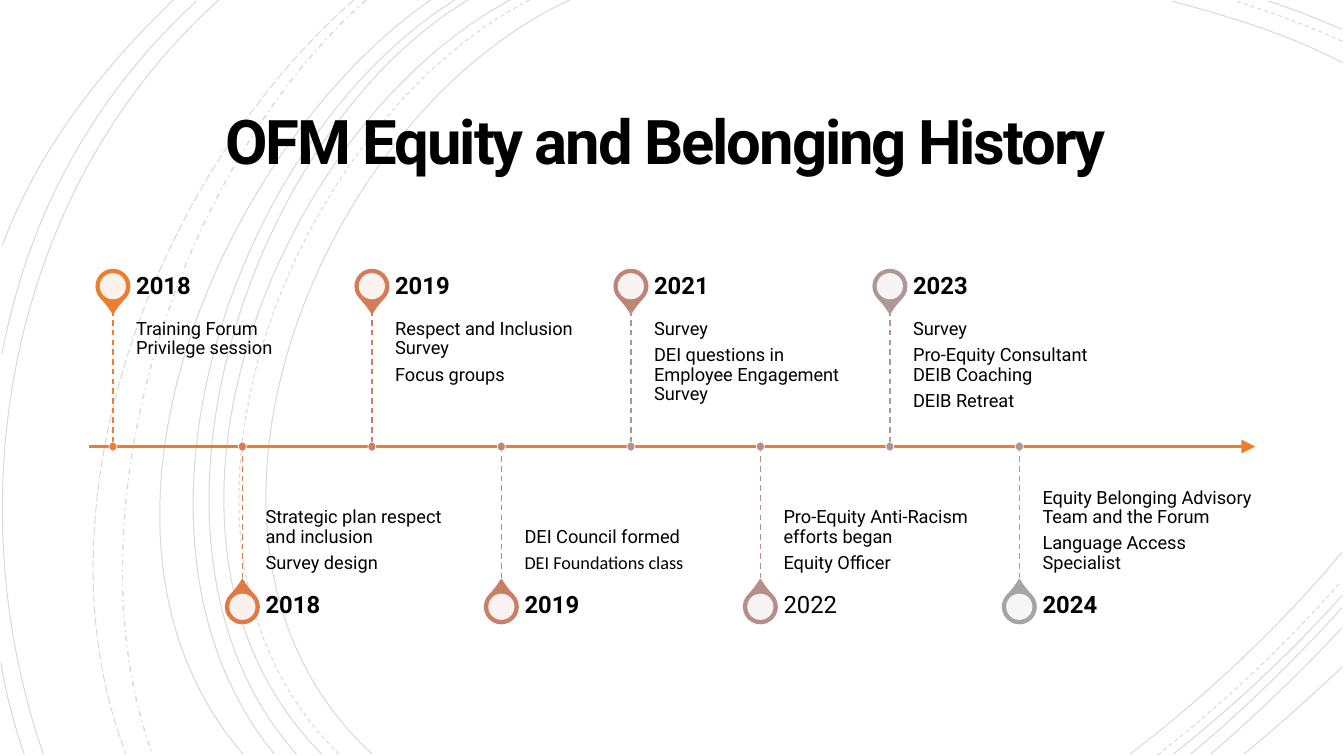
from lxml import etree
from pptx import Presentation
from pptx import util as u
from pptx.dml.color import RGBColor
from pptx.enum import dml, shapes, text
from pptx.oxml.ns import qn

BLACK = RGBColor(0, 0, 0)
WHITE = RGBColor(255, 255, 255)
ORANGE = RGBColor(0xED, 0x7D, 0x31)
RUST = RGBColor(0xE0, 0x7A, 0x44)
BRICK = RGBColor(0xDC, 0x7A, 0x4B)
CLAY = RGBColor(0xD5, 0x7B, 0x56)
SIENNA = RGBColor(0xCC, 0x7D, 0x64)
CORAL = RGBColor(0xCA, 0x7E, 0x67)
ROSE = RGBColor(0xBF, 0x84, 0x78)
BLUSH = RGBColor(0xBD, 0x86, 0x7B)
MAUVE = RGBColor(0xB6, 0x8D, 0x88)
DUSK = RGBColor(0xB0, 0x93, 0x91)
ASH = RGBColor(0xAD, 0x98, 0x97)
GRAY = RGBColor(0xA5, 0xA5, 0xA5)

DASH = dml.MSO_LINE.DASH
LONG = dml.MSO_LINE.LONG_DASH
MIXED = dml.MSO_LINE.DASH_DOT
SOLID = dml.MSO_LINE.SOLID
TOP = text.MSO_ANCHOR.TOP
MIDDLE = text.MSO_ANCHOR.MIDDLE
BOTTOM = text.MSO_ANCHOR.BOTTOM

# Start, two control points and end of each background curve
ARCS = {
    SOLID: [
        (5.65, 0, 3.15, 1.15, 1.43, 5.4, 3.69, 7.48),
        (13.31, 0.62, 12.78, 0.34, 12.18, 0.16, 11.62, 0.01),
        (11.21, 7.48, 11.97, 6.9, 12.69, 6.22, 13.31, 5.48),
        (5.06, 0, 2.7, 1.27, 1.1, 5.37, 3.19, 7.48),
        (13.31, 0.29, 13.07, 0.19, 12.83, 0.09, 12.58, 0.01),
        (11.64, 7.48, 12.23, 7.01, 12.8, 6.48, 13.31, 5.91),
        (4.64, 0, 2.44, 1.33, 1.1, 5.41, 2.94, 7.48),
        (11.81, 7.48, 12.34, 7.04, 12.84, 6.55, 13.31, 6.03),
        (4.51, 0, 2.31, 1.38, 0.97, 5.33, 2.72, 7.48),
        (12.01, 7.48, 12.46, 7.09, 12.9, 6.67, 13.31, 6.23),
        (4.27, 0, 2.17, 1.47, 0.53, 5.29, 2.41, 7.48),
        (12.34, 7.48, 12.67, 7.21, 12.99, 6.92, 13.31, 6.62),
        (2.17, 0, 0.11, 1.85, -0.46, 4.9, 0.43, 7.48),
        (1.95, 0.01, 0.92, 0.96, 0.28, 2.14, 0.02, 3.51),
        (0.01, 6.58, 0.06, 6.89, 0.14, 7.19, 0.24, 7.48),
        (1.72, 0, 1, 0.69, 0.37, 1.5, 0.02, 2.44),
    ],
    DASH: [
        (5.25, 0, 2.85, 1.25, 1.23, 5.37, 3.36, 7.48),
        (13.31, 0.41, 12.97, 0.25, 12.6, 0.12, 12.25, 0.01),
        (11.48, 7.49, 12.13, 6.98, 12.75, 6.4, 13.3, 5.77),
    ],
    MIXED: [(3.63, 0, 1.76, 1.66, 0.65, 5.09, 1.51, 7.48)],
    LONG: [(3.51, 0, 1.57, 1.69, 0.29, 4.99, 1.25, 7.48)],
}

# Year, pin colour, stem colour, notes; events alternate above and below the axis
EVENTS = [
    ("2018", ORANGE, ORANGE, ["Training Forum\nPrivilege session"]),
    ("2018", RUST, BRICK, ["Strategic plan respect\nand inclusion", "Survey design"]),
    ("2019", CLAY, SIENNA, ["Respect and Inclusion Survey", "Focus groups"]),
    ("2019", CORAL, BLUSH, ["DEI Council formed", "DEI Foundations class"]),
    ("2021", ROSE, DUSK, ["Survey", "DEI questions in Employee Engagement Survey"]),
    ("2022", MAUVE, MAUVE, ["Pro-Equity Anti-Racism efforts began", "Equity Officer"]),
    ("2023", ASH, ASH, ["Survey", "Pro-Equity Consultant DEIB Coaching", "DEIB Retreat"]),
    ("2024", GRAY, ASH, ["Equity Belonging Advisory Team and the Forum",
                         "Language Access Specialist"]),
]
FACES = {"DEI Foundations class": "Calibri"}
PLAIN = {"2022"}
WIDE, HIGH = 13.33, 7.5
FIRST, LAST, AXIS = 1.12, 10.11, 4.43
STEP = (LAST - FIRST) / (len(EVENTS) - 1)


def apply(target, **values):
    for name, value in values.items():
        setattr(target, name, value)


def fade(shape, percent):
    """Set the opacity of the shape's own colours."""
    for tint in shape.element.iter(qn("a:srgbClr")):
        etree.SubElement(tint, qn("a:alpha"), val=str(percent * 1000))


def stroke(line, color, width, dash=SOLID):
    line.color.rgb = color
    apply(line, width=u.Pt(width), dash_style=dash)


def arc(slide, points, dash):
    """Draw one cubic curve."""
    spots = [(u.Inches(x), u.Inches(y)) for x, y in zip(points[::2], points[1::2])]
    maker = slide.shapes.build_freeform(*spots[0])
    maker.add_line_segments(spots[1:], close=False)
    curve = maker.convert_to_shape()
    legs = list(curve.element.iter(qn("a:lnTo")))
    bend = etree.SubElement(legs[0].getparent(), qn("a:cubicBezTo"))
    for leg in legs:
        bend.append(leg[0])
        leg.getparent().remove(leg)
    curve.shadow.inherit = False
    curve.fill.background()
    stroke(curve.line, BLACK, 1 if dash == MIXED else 0.75, dash)
    fade(curve, 15)


def rule(slide, start, end, color, width, dash=SOLID):
    ends = [u.Inches(v) for v in (*start, *end)]
    line = slide.shapes.add_connector(shapes.MSO_CONNECTOR.STRAIGHT, *ends)
    stroke(line.line, color, width, dash)
    etree.SubElement(line.element.spPr, qn("a:effectLst"))
    return line


def mark(slide, kind, x, y, wide, high, fill, edge=None, width=0):
    """Draw a shape centred on x, y."""
    place = [u.Inches(v) for v in (x - wide / 2, y - high / 2, wide, high)]
    shape = slide.shapes.add_shape(kind, *place)
    shape.shadow.inherit = False
    shape.fill.solid()
    shape.fill.fore_color.rgb = fill
    if edge is None:
        shape.line.fill.background()
    else:
        stroke(shape.line, edge, width)
    return shape


def frame(shape, anchor, pads):
    left, top, right, bottom = [u.Inches(v) for v in pads]
    apply(shape.text_frame, word_wrap=True, auto_size=text.MSO_AUTO_SIZE.NONE,
          vertical_anchor=anchor, margin_left=left, margin_top=top,
          margin_right=right, margin_bottom=bottom)


def label(slide, place, lines, size, anchor, pads, bold=False):
    box = slide.shapes.add_textbox(*[u.Inches(v) for v in place])
    frame(box, anchor, pads)
    for i, words in enumerate(lines):
        para = box.text_frame.add_paragraph() if i else box.text_frame.paragraphs[0]
        para.text = words
        apply(para, line_spacing=0.9, space_after=u.Pt(4.55))
        for run in para.runs:
            apply(run.font, size=u.Pt(size), bold=bold, name=FACES.get(words, "Roboto"))
            run.font.color.rgb = BLACK


def event(slide, order, year, pin, stem, notes):
    x = FIRST + order * STEP
    above = order % 2 == 0
    head = 2.84 if above else 6.02
    drop = mark(slide, shapes.MSO_SHAPE.TEAR, x, head, 0.33, 0.33, pin, pin, 1.25)
    drop.adjustments[0] = 1.15
    drop.rotation = 135 if above else 315
    fade(mark(slide, shapes.MSO_SHAPE.OVAL, x, head, 0.26, 0.26, WHITE), 90)
    left = x + 0.23
    label(slide, (left, 3.08 if above else AXIS, 2.11, 1.35), notes, 13,
          TOP if above else BOTTOM,
          (0, 0.09, 0.09, 0.14) if above else (0, 0.14, 0, 0.09))
    label(slide, (left, 2.61 if above else 5.78, 2.11, 0.47), [year], 17,
          MIDDLE, (0, 0, 0.12, 0), year not in PLAIN)
    rule(slide, (x, 3.08 if above else AXIS), (x, AXIS if above else 5.78), stem, 1, DASH)
    mark(slide, shapes.MSO_SHAPE.OVAL, x, AXIS, 0.08, 0.09, stem, WHITE, 0.5)


def title(slide, words):
    head = slide.shapes.title
    apply(head, left=u.Inches(1.86), top=u.Inches(0.87),
          width=u.Inches(9.49), height=u.Inches(1.15))
    frame(head, MIDDLE, [0.25] * 4)
    para = head.text_frame.paragraphs[0]
    para.text = words
    apply(para, alignment=text.PP_ALIGN.CENTER, line_spacing=0.85)
    font = para.runs[0].font
    apply(font, size=u.Pt(44), bold=True, name="Roboto")
    font.color.rgb = BLACK
    for props in head.element.iter(qn("a:rPr")):
        props.set("spc", "-150")
    head.element.getparent().append(head.element)


def main():
    deck = Presentation()
    apply(deck, slide_width=u.Inches(WIDE), slide_height=u.Inches(HIGH))
    slide = deck.slides.add_slide(deck.slide_layouts[5])
    mark(slide, shapes.MSO_SHAPE.RECTANGLE, WIDE / 2, HIGH / 2, WIDE, HIGH, WHITE)
    for dash, group in ARCS.items():
        for points in group:
            arc(slide, points, dash)
    title(slide, "OFM Equity and Belonging History")
    axis = rule(slide, (0.88, AXIS), (12.45, AXIS), ORANGE, 1.5)
    for line in axis.element.iter(qn("a:ln")):
        etree.SubElement(line, qn("a:tailEnd"), type="triangle", w="lg", len="lg")
    for order, facts in enumerate(EVENTS):
        event(slide, order, *facts)
    deck.save("out.pptx")


if __name__ == "__main__":
    main()
